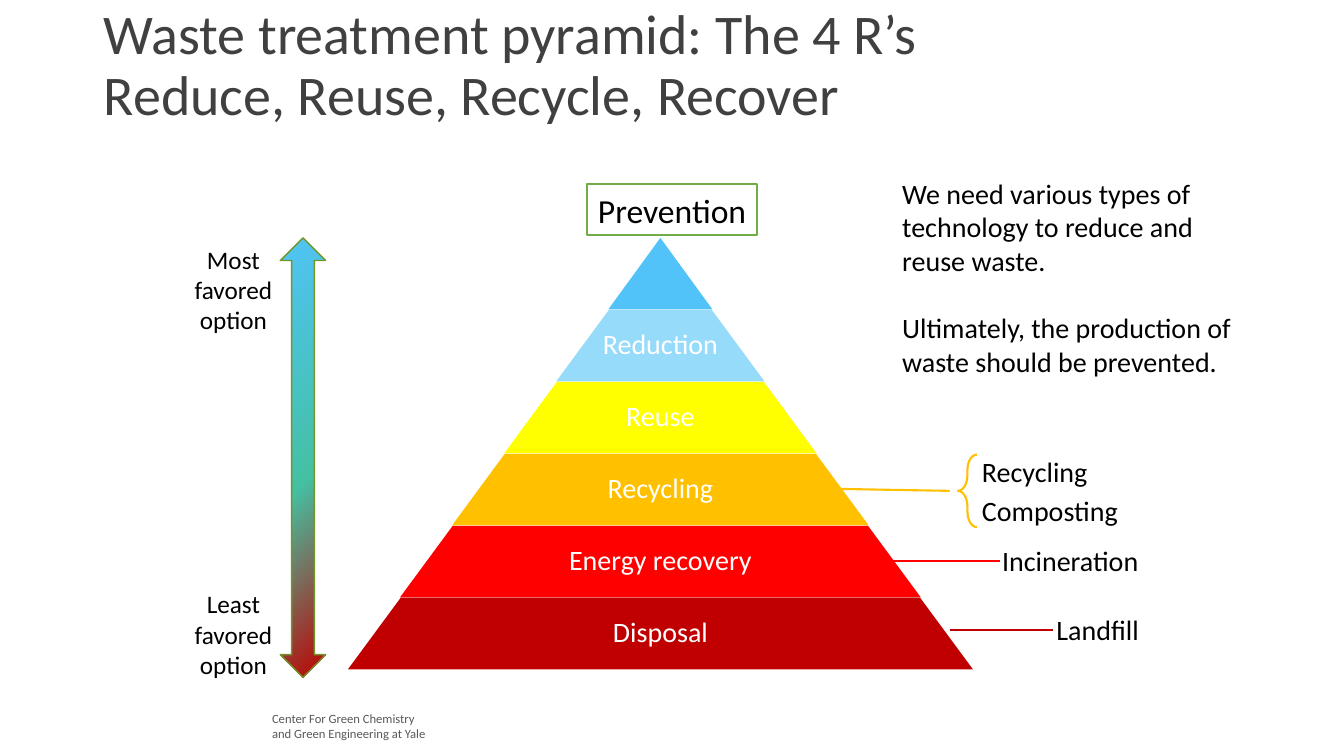
from lxml import etree
from pptx import Presentation
from pptx.dml.color import RGBColor
from pptx.enum import shapes, text
from pptx.oxml import ns
from pptx.util import Inches, Pt

FONT = "Calibri"
COLORS = {
    "title": "404040",
    "text": "000000",
    "credit": "595959",
    "white": "FFFFFF",
    "prevention": "70AD47",
    "arrow_line": "719629",
    "teal": "44C1A3",
    "blue": "51C3F9",
    "light_blue": "97DBFB",
    "yellow": "FFFF00",
    "orange": "FFC000",
    "red": "FF0000",
    "dark_red": "C00000",
}
# Pyramid levels from the tip to the base
LEVELS = [
    ("", "blue"),
    ("Reduction", "light_blue"),
    ("Reuse", "yellow"),
    ("Recycling", "orange"),
    ("Energy recovery", "red"),
    ("Disposal", "dark_red"),
]
CENTER_X, TIP_Y = 6.55, 2.36
LEVEL_PITCH, LEVEL_HEIGHT, LEVEL_GROWTH = 0.714, 0.71, 1.033


def color(name):
    return RGBColor.from_string(COLORS[name])


def format_runs(paragraph, size, color_name):
    for run in paragraph.runs:
        run.font.name = FONT
        run.font.size = Pt(size)
        run.font.color.rgb = color(color_name)


def fill_text(shape, content, size, color_name="text", align=text.PP_ALIGN.LEFT, wrap=True):
    frame = shape.text_frame
    frame.text = content
    frame.word_wrap = wrap
    frame.auto_size = text.MSO_AUTO_SIZE.NONE
    for paragraph in frame.paragraphs:
        paragraph.alignment = align
        format_runs(paragraph, size, color_name)
    return frame


def add_text(slide, box, content, size, *style, **options):
    shape = slide.shapes.add_textbox(*map(Inches, box))
    return fill_text(shape, content, size, *style, **options)


def add_shape(slide, kind, box, fill=None, line=None, width=1.5):
    shape = slide.shapes.add_shape(kind, *map(Inches, box))
    shape.shadow.inherit = False
    if fill:
        shape.fill.solid()
        shape.fill.fore_color.rgb = color(fill)
    else:
        shape.fill.background()
    if line:
        shape.line.color.rgb = color(line)
        shape.line.width = Pt(width)
    else:
        shape.line.fill.background()
    return shape


def add_line(slide, start, end, color_name):
    line = slide.shapes.add_connector(
        shapes.MSO_CONNECTOR.STRAIGHT, *map(Inches, start + end))
    line.line.color.rgb = color(color_name)
    line.line.width = Pt(1.5)
    etree.SubElement(line._element.spPr, ns.qn("a:effectLst"))


def set_corner_gradient(shape, stops):
    """Fill a shape with a round gradient that starts at the bottom right."""
    shape.fill.gradient()
    gradient = shape._element.spPr.find(ns.qn("a:gradFill"))
    for child in list(gradient):
        gradient.remove(child)
    stop_list = etree.SubElement(gradient, ns.qn("a:gsLst"))
    for percent, name in stops:
        stop = etree.SubElement(stop_list, ns.qn("a:gs"), pos=str(percent * 1000))
        etree.SubElement(stop, ns.qn("a:srgbClr"), val=COLORS[name])
    circle = etree.SubElement(gradient, ns.qn("a:path"), path="circle")
    etree.SubElement(circle, ns.qn("a:fillToRect"), l="100000", t="100000")


def add_title(slide):
    title = slide.shapes.title
    title.left, title.top, title.width, title.height = map(Inches, (0.54, 0.01, 11.4, 1.31))
    frame = title.text_frame
    frame.vertical_anchor = text.MSO_ANCHOR.MIDDLE
    frame.auto_size = text.MSO_AUTO_SIZE.NONE
    paragraph = frame.paragraphs[0]
    paragraph.text = "Waste treatment pyramid: The 4 R’s\nReduce, Reuse, Recycle, Recover"
    paragraph.alignment = text.PP_ALIGN.LEFT
    paragraph.line_spacing = 0.9
    paragraph._p.get_or_add_pPr().set("marL", str(Inches(0.39)))
    format_runs(paragraph, 40, "title")


def add_level(slide, index, label, color_name):
    width = LEVEL_GROWTH * (index + 1)
    top = TIP_Y + LEVEL_PITCH * index
    band = add_shape(slide, shapes.MSO_SHAPE.TRAPEZOID,
                     (CENTER_X - width / 2, top, width, LEVEL_HEIGHT), color_name)
    band.adjustments[0] = 0.737
    if label:
        text_width = width * 0.65
        frame = add_text(slide, (CENTER_X - text_width / 2, top, text_width, LEVEL_HEIGHT),
                         label, 20, "white", text.PP_ALIGN.CENTER)
        frame.vertical_anchor = text.MSO_ANCHOR.MIDDLE
        frame.margin_left = frame.margin_right = Inches(0.03)
        frame.margin_top = frame.margin_bottom = Inches(0.03)
        frame.paragraphs[0].line_spacing = 0.9


def add_preference_scale(slide):
    arrow = add_shape(slide, shapes.MSO_SHAPE.UP_DOWN_ARROW,
                      (2.78, 2.36, 0.45, 4.36), line="arrow_line", width=1)
    set_corner_gradient(arrow, [(0, "dark_red"), (45, "teal"), (100, "blue")])
    for top, label in [(2.37, "Most favored option"), (5.79, "Least favored option")]:
        add_text(slide, (1.63, top, 1.37, 1.07), label, 18, align=text.PP_ALIGN.CENTER)


def add_examples(slide):
    for box, label in [
        ((9.64, 4.46, 1.26, 0.44), "Recycling"),
        ((9.64, 4.85, 1.56, 0.44), "Composting"),
        ((9.84, 5.34, 1.57, 0.44), "Incineration"),
        ((10.38, 6.03, 1.03, 0.44), "Landfill"),
    ]:
        add_text(slide, box, label, 20, wrap=False)
    brace = add_shape(slide, shapes.MSO_SHAPE.LEFT_BRACE, (9.5, 4.51, 0.19, 0.72), line="orange")
    brace.adjustments[0] = 0.798
    add_line(slide, (8.31, 4.85), (9.42, 4.87), "orange")
    add_line(slide, (8.8, 5.57), (9.92, 5.57), "red")
    add_line(slide, (9.42, 6.25), (10.44, 6.25), "dark_red")


def main():
    presentation = Presentation()
    presentation.slide_width, presentation.slide_height = Inches(13.33), Inches(7.5)
    slide = presentation.slides.add_slide(presentation.slide_layouts[5])
    add_title(slide)

    # Pyramid with the goal above its tip
    for index, (label, color_name) in enumerate(LEVELS):
        add_level(slide, index, label, color_name)
    prevention = add_shape(slide, shapes.MSO_SHAPE.RECTANGLE,
                           (5.82, 1.83, 1.69, 0.5), line="prevention")
    fill_text(prevention, "Prevention", 24, align=text.PP_ALIGN.CENTER, wrap=False)

    # Scale on the left, examples on the right
    add_preference_scale(slide)
    add_examples(slide)

    # Message and credit
    message = add_text(
        slide, (8.85, 1.7, 3.73, 2.12),
        "We need various types of technology to reduce and reuse waste.\n"
        "Ultimately, the production of waste should be prevented.", 20)
    message.paragraphs[1].space_before = Pt(24)
    add_text(slide, (2.6, 7, 1.86, 0.4),
             "Center For Green Chemistry\nand Green Engineering at Yale", 9, "credit")
    presentation.save("out.pptx")


if __name__ == "__main__":
    main()
